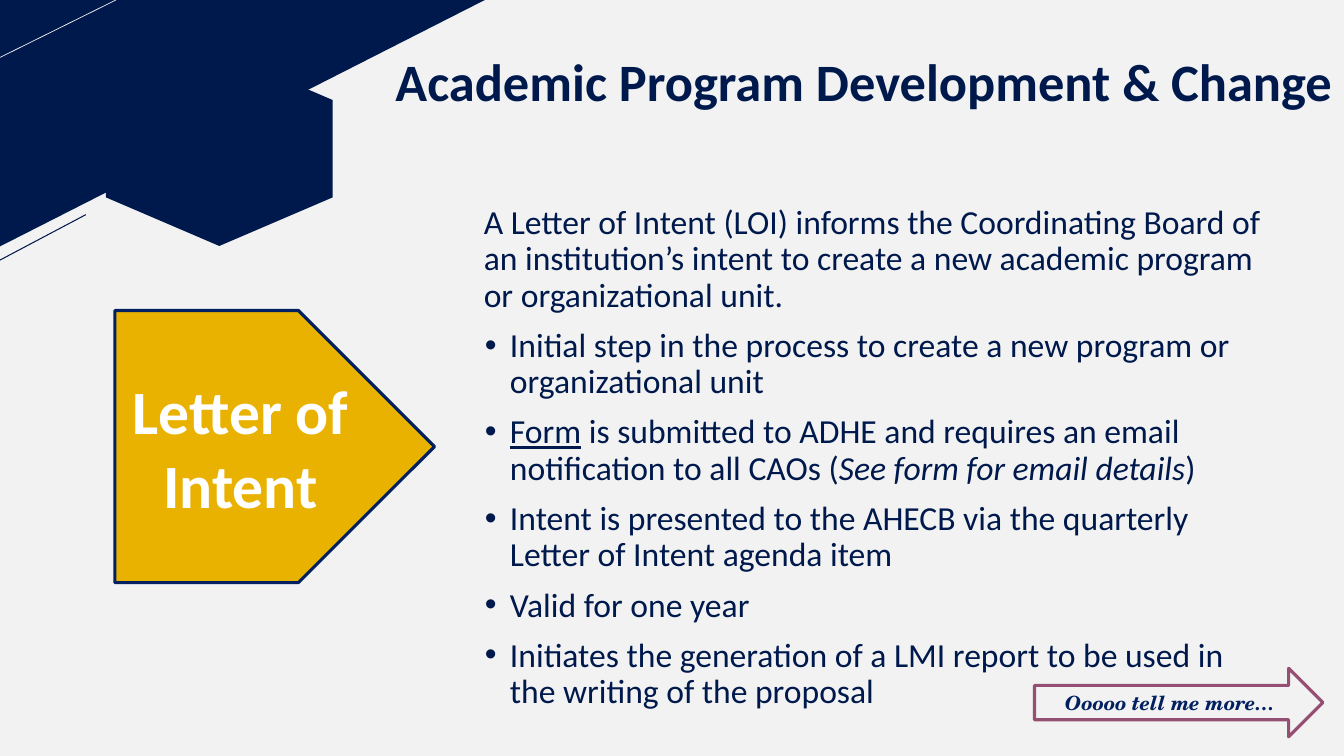
"""Build the Letter of Intent slide; places are percentages of the slide's width and height."""
from lxml import etree
from pptx import Presentation
from pptx import util as u
from pptx.dml.color import RGBColor
from pptx.enum import shapes, text
from pptx.oxml.ns import qn

WIDTH, HEIGHT = u.Inches(13.33), u.Inches(7.5)
NAVY, INK, PALE, GOLD, PLUM, WHITE = "00194C", "002060", "F2F2F2", "EAB200", "954F72", "FFFFFF"

TITLE = "Academic Program Development & Change"
INTRO = ("A Letter of Intent (LOI) informs the Coordinating Board of an institution’s "
         "intent to create a new academic program or organizational unit.")
BULLETS = [
    [("Initial step in the process to create a new program or organizational unit", {})],
    [("Form", {"underline": True}),
     (" is submitted to ADHE and requires an email notification to all CAOs (", {}),
     ("See form for email details", {"italic": True}), (")", {})],
    [("Intent is presented to the AHECB via the quarterly Letter of Intent agenda item", {})],
    [("Valid for one year", {})],
    [("Initiates the generation of a LMI report to be used in the writing of the proposal", {})],
]
LABEL = ["Letter of", "Intent"]
TEASER = "Ooooo tell me more…"

CORNER = [(0, 0), (36.08, 0), (0, 32.6)]
STRIPES = [((0, 7.6), (8.63, 0), PALE, 0.5), ((0, 34.4), (6.38, 28.4), NAVY, 0.75)]
PLACES = {
    "hexagon": (9.08, 4.67, 14.48, 30),
    "title": (28.66, 2.53, 71.34, 16.67),
    "body": (35.26, 26.53, 60.17, 69.47),
    "label": (8.55, 41.07, 23.78, 36),
    "teaser": (76.97, 88.4, 21.46, 9.07),
}


def color(value):
    """Turn a hex string into a colour."""
    return RGBColor.from_string(value)


def point(across, down):
    """Turn percentages into slide lengths."""
    return round(WIDTH * across / 100), round(HEIGHT * down / 100)


def place(name):
    """Give left, top, width and height of a named part."""
    left, top, width, height = PLACES[name]
    return point(left, top) + point(width, height)


def paint(shape, fill=None, line=None):
    """Set fill and outline, and drop the shadow."""
    shape.shadow.inherit = False
    if fill:
        shape.fill.solid()
        shape.fill.fore_color.rgb = color(fill)
    else:
        shape.fill.background()
    if line:
        shape.line.color.rgb = color(line)
        shape.line.width = u.Pt(2.25)
    else:
        shape.line.fill.background()
    return shape


def add_bullet(para):
    """Give a paragraph a hanging round bullet."""
    props = para._p.get_or_add_pPr()
    props.set("marL", str(u.Inches(0.26)))
    props.set("indent", str(-u.Inches(0.25)))
    etree.SubElement(props, qn("a:buFont")).set("typeface", "Arial")
    etree.SubElement(props, qn("a:buChar")).set("char", "•")


def write(box, paras, size, ink, font="Calibri", bold=False, italic=False, spacing=None,
          before=0, align="CENTER", anchor="MIDDLE", bulleted=False, wrap=True):
    """Fill a box with paragraphs, each a list of (text, format) spans."""
    frame = box.text_frame
    frame.word_wrap = wrap
    frame.vertical_anchor = text.MSO_ANCHOR[anchor]
    for index, spans in enumerate(paras):
        para = frame.add_paragraph() if index else frame.paragraphs[0]
        para.alignment = text.PP_ALIGN[align]
        if spacing:
            para.line_spacing = spacing
        para.space_before = u.Pt(before if index else 0)
        if bulleted and index:
            add_bullet(para)
        for words, style in spans:
            span = para.add_run()
            span.text = words
            span.font.name, span.font.size = font, u.Pt(size)
            span.font.bold, span.font.italic = bold, style.get("italic", italic)
            span.font.underline = style.get("underline", False)
            span.font.color.rgb = color(ink)


def decorate(page):
    """Draw the navy corner, its stripes and the hexagon."""
    page.background.fill.solid()
    page.background.fill.fore_color.rgb = color(PALE)
    corner = [point(*spot) for spot in CORNER]
    builder = page.shapes.build_freeform(*corner[0])
    builder.add_line_segments(corner[1:])
    paint(builder.convert_to_shape(), NAVY)
    for start, end, ink, width in STRIPES:
        stripe = page.shapes.add_connector(shapes.MSO_CONNECTOR.STRAIGHT, *point(*start), *point(*end))
        stripe.line.color.rgb = color(ink)
        stripe.line.width = u.Pt(width)
        etree.SubElement(stripe._element.spPr, qn("a:effectLst"))
    hexagon = page.shapes.add_shape(shapes.MSO_SHAPE.HEXAGON, *place("hexagon"))
    paint(hexagon, NAVY).rotation = 270


def main():
    """Build and save the slide."""
    deck = Presentation()
    deck.slide_width, deck.slide_height = WIDTH, HEIGHT
    page = deck.slides.add_slide(deck.slide_layouts[6])
    decorate(page)

    title = page.shapes.add_textbox(*place("title"))
    title.text_frame.margin_bottom = 0
    write(title, [[(TITLE, {})]], 37.5, NAVY, bold=True, spacing=0.9, wrap=False)

    body = page.shapes.add_textbox(*place("body"))
    write(body, [[(INTRO, {})]] + BULLETS, 24, NAVY, spacing=0.9, before=10,
          align="LEFT", anchor="TOP", bulleted=True)

    label = page.shapes.add_shape(shapes.MSO_SHAPE.PENTAGON, *place("label"))
    write(paint(label, GOLD, INK), [[(line, {})] for line in LABEL], 44, WHITE, bold=True)

    teaser = page.shapes.add_shape(shapes.MSO_SHAPE.RIGHT_ARROW, *place("teaser"))
    write(paint(teaser, line=PLUM), [[(TEASER, {})]], 14, INK,
          font="TeX Gyre Schola", bold=True, italic=True)

    deck.save("out.pptx")


if __name__ == "__main__":
    main()
